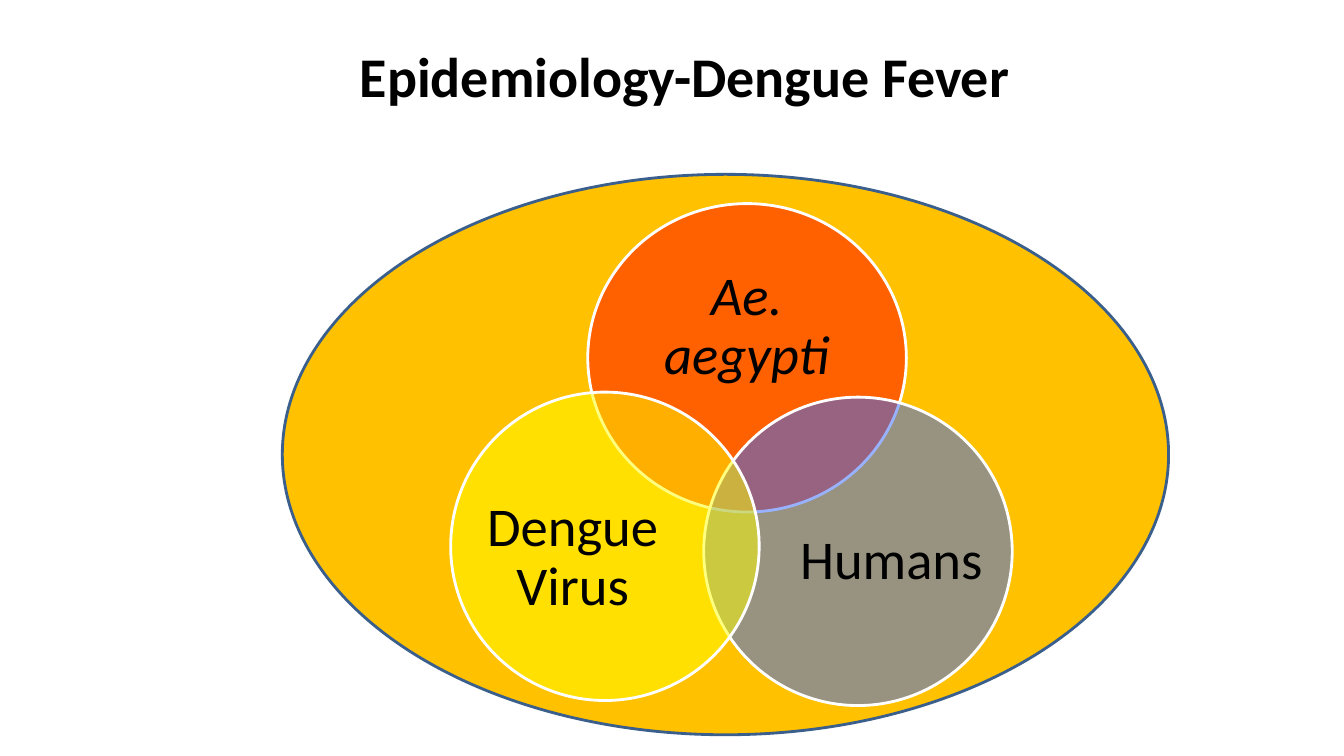
from lxml.etree import SubElement
from pptx import Presentation
from pptx.dml.color import RGBColor
from pptx.enum.shapes import MSO_SHAPE
from pptx.enum.text import MSO_ANCHOR, PP_ALIGN
from pptx.oxml.ns import qn
from pptx.util import Emu, Pt

EMU_PER_PX = 9144  # 100 px to the inch

# circle box, fill, label, label box, italic
VENN_SETS = [
    ((583, 202, 316, 306), "FF0000", "Ae. aegypti", (625, 256, 231, 138), True),
    ((698, 394, 306, 306), "3366FF", "Humans", (792, 473, 184, 169), False),
    ((447, 389, 306, 306), "FFFF00", "Dengue Virus", (476, 469, 184, 169), False),
]


def px(length):
    return Emu(length * EMU_PER_PX)


def color(hex_code):
    return RGBColor.from_string(hex_code)


def add_ellipse(slide, box, fill, line, opacity=100):
    """Draw an outlined ellipse; opacity is a percentage."""
    shape = slide.shapes.add_shape(MSO_SHAPE.OVAL, *map(px, box))
    shape.shadow.inherit = False
    shape.fill.solid()
    shape.fill.fore_color.rgb = color(fill)
    shape.line.color.rgb = color(line)
    shape.line.width = Pt(2)
    if opacity < 100:
        fill_color = shape.fill._xPr.find(qn("a:solidFill"))[0]
        SubElement(fill_color, qn("a:alpha"), val=str(opacity * 1000))


def add_text(slide, box, text, size, bold=False, italic=False, line_spacing=1.0):
    """Add text centred both ways in a box without margins."""
    frame = slide.shapes.add_textbox(*map(px, box)).text_frame
    frame.word_wrap = True
    frame.vertical_anchor = MSO_ANCHOR.MIDDLE
    frame.margin_left = frame.margin_right = 0
    frame.margin_top = frame.margin_bottom = 0
    paragraph = frame.paragraphs[0]
    paragraph.alignment = PP_ALIGN.CENTER
    paragraph.line_spacing = line_spacing
    run = paragraph.add_run()
    run.text = text
    run.font.name = "Calibri"
    run.font.size = Pt(size)
    run.font.bold = bold
    run.font.italic = italic
    run.font.color.rgb = color("000000")


def main():
    presentation = Presentation()
    presentation.slide_width = px(1333)
    presentation.slide_height = px(750)
    slide = presentation.slides.add_slide(presentation.slide_layouts[6])

    add_text(slide, (79, 11, 1200, 127), "Epidemiology-Dengue Fever", 40, bold=True)
    add_ellipse(slide, (280, 173, 879, 556), "FFC100", "3A5F8C")
    for circle_box, fill, label, label_box, italic in VENN_SETS:
        add_ellipse(slide, circle_box, fill, "FFFFFF", opacity=50)
        add_text(slide, label_box, label, 39, italic=italic, line_spacing=0.9)

    presentation.save("out.pptx")


if __name__ == "__main__":
    main()
